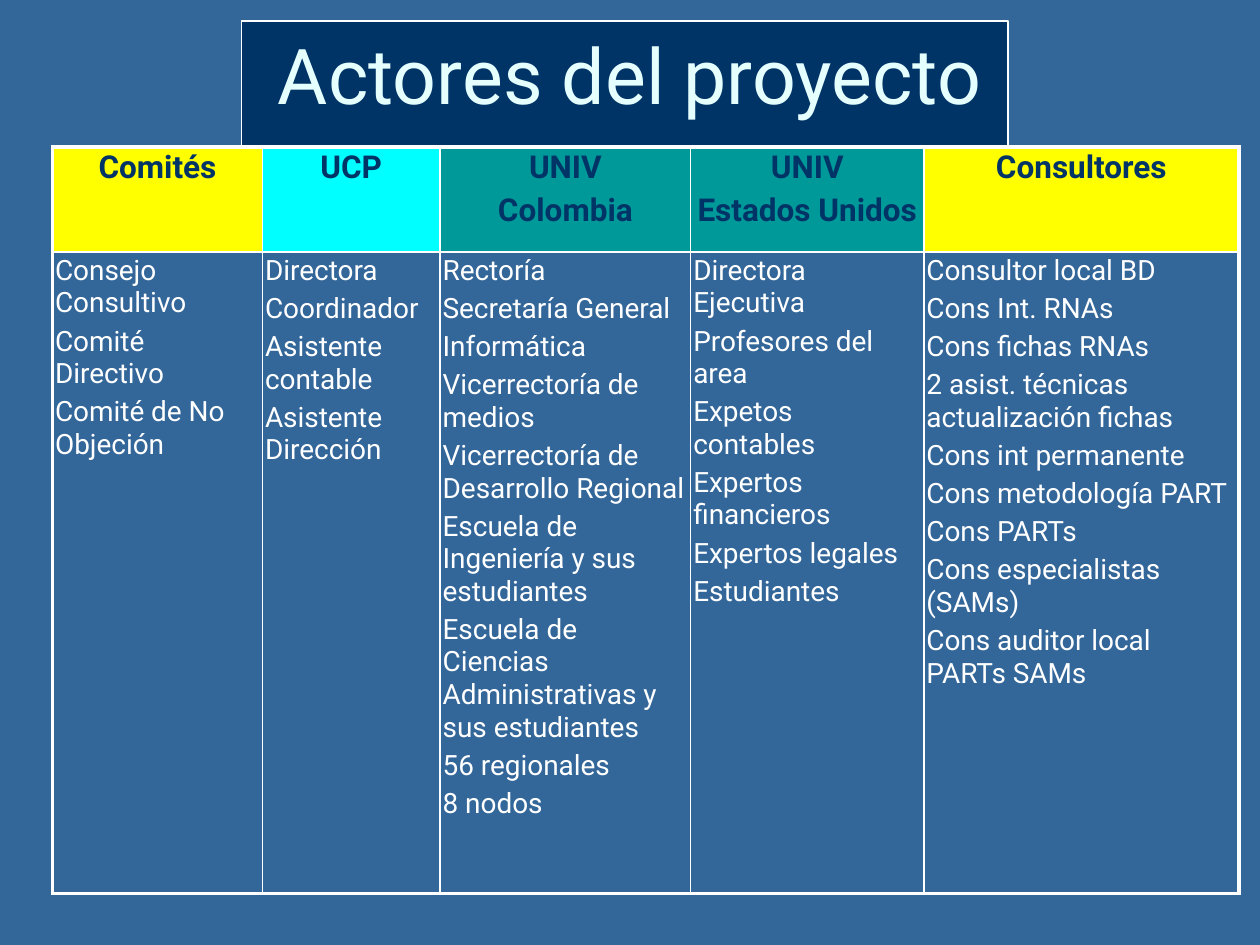
import dataclasses

import lxml.etree
import pptx
import pptx.dml.color
import pptx.enum.shapes
import pptx.enum.text
import pptx.oxml.ns
import pptx.slide
import pptx.table
import pptx.text.text
import pptx.util

Pt = pptx.util.Pt
Align = pptx.enum.text.PP_ALIGN


@dataclasses.dataclass(frozen=True)
class Theme:
    """Colours, font, type sizes and line widths."""
    face: str = "Roboto"
    back: str = "336699"
    navy: str = "003366"
    pale: str = "E5FFFF"
    white: str = "FFFFFF"
    yellow: str = "FFFF00"
    cyan: str = "00FFFF"
    teal: str = "009999"
    title: float = 44
    head: float = 18
    body: float = 16
    frame: float = 2.25
    rule: float = 1
    edge: float = 0.75
    inset: float = 1.5


@dataclasses.dataclass(frozen=True)
class Group:
    """One column of actors."""
    head: list[str]
    fill: str
    width: float
    names: list[str]


THEME = Theme()
LEFT, TOP = 30, 84
ROWS = [60, 366.5]
GROUPS = [
    Group(["Comités"], THEME.yellow, 120,
          ["Consejo Consultivo", "Comité Directivo", "Comité de No Objeción"]),
    Group(["UCP"], THEME.cyan, 101.5,
          ["Directora", "Coordinador", "Asistente contable",
           "Asistente Dirección"]),
    Group(["UNIV", "Colombia"], THEME.teal, 143.25,
          ["Rectoría", "Secretaría General", "Informática",
           "Vicerrectoría de medios", "Vicerrectoría de Desarrollo Regional",
           "Escuela de Ingeniería y sus estudiantes",
           "Escuela de Ciencias Administrativas y sus estudiantes",
           "56 regionales", "8 nodos"]),
    Group(["UNIV", "Estados Unidos"], THEME.teal, 133.25,
          ["Directora Ejecutiva", "Profesores del area", "Expetos contables",
           "Expertos financieros", "Expertos legales", "Estudiantes"]),
    Group(["Consultores"], THEME.yellow, 180,
          ["Consultor local BD", "Cons Int. RNAs", "Cons fichas RNAs",
           "2 asist. técnicas actualización fichas", "Cons int permanente",
           "Cons metodología PART", "Cons PARTs",
           "Cons especialistas (SAMs)", "Cons auditor local PARTs SAMs"]),
]


def tint(code: str) -> pptx.dml.color.RGBColor:
    """Return the colour for a hex code."""
    return pptx.dml.color.RGBColor.from_string(code)


def style(para: pptx.text.text._Paragraph, size: float, code: str,
          bold: bool, align: Align) -> None:
    """Set the font and alignment of a paragraph."""
    para.alignment = align
    font = para.font
    font.name, font.size, font.bold = THEME.face, Pt(size), bold
    font.color.rgb = tint(code)


def write(cell: pptx.table._Cell, lines: list[str], size: float, code: str,
          bold: bool, align: Align) -> None:
    """Write one paragraph per line, a fifth of the size apart."""
    cell.margin_left = cell.margin_right = Pt(THEME.inset)
    cell.margin_top = cell.margin_bottom = Pt(THEME.inset)
    cell.text_frame.text = "\n".join(lines)
    for spot, para in enumerate(cell.text_frame.paragraphs):
        style(para, size, code, bold, align)
        para.space_before = Pt(0.2 * size if spot else 0)


def border(cell: pptx.table._Cell, outer: dict[str, bool]) -> None:
    """Draw the four borders, thicker on outer sides."""
    qn = pptx.oxml.ns.qn
    props = cell._tc.get_or_add_tcPr()
    for spot, (side, thick) in enumerate(outer.items()):
        line = lxml.etree.Element(qn(f"a:ln{side}"))
        line.set("w", str(Pt(THEME.frame if thick else THEME.rule)))
        fill = lxml.etree.SubElement(line, qn("a:solidFill"))
        lxml.etree.SubElement(fill, qn("a:srgbClr")).set("val", THEME.white)
        props.insert(spot, line)


def draw_title(slide: pptx.slide.Slide, text: str) -> None:
    """Draw the title on its navy panel."""
    panel = slide.shapes.add_shape(pptx.enum.shapes.MSO_SHAPE.RECTANGLE,
                                   Pt(138), Pt(12), Pt(438), Pt(72))
    panel.shadow.inherit = False
    panel.fill.solid()
    panel.fill.fore_color.rgb = tint(THEME.navy)
    panel.line.color.rgb = tint(THEME.white)
    panel.line.width = Pt(THEME.edge)
    title = slide.shapes.title
    title.left, title.top = Pt(36), Pt(18)
    title.width, title.height = Pt(648), Pt(48)
    frame = title.text_frame
    frame.text = text
    frame.auto_size = pptx.enum.text.MSO_AUTO_SIZE.NONE
    frame.vertical_anchor = pptx.enum.text.MSO_ANCHOR.MIDDLE
    style(frame.paragraphs[0], THEME.title, THEME.pale, False, Align.CENTER)
    panel.element.addnext(title.element)


def draw_table(slide: pptx.slide.Slide, groups: list[Group]) -> None:
    """Draw the groups as columns with a heading and a list."""
    width = sum(group.width for group in groups)
    table = slide.shapes.add_table(len(ROWS), len(groups), Pt(LEFT), Pt(TOP),
                                   Pt(width), Pt(sum(ROWS))).table
    for row, height in zip(table.rows, ROWS):
        row.height = Pt(height)
    for col, group in enumerate(groups):
        table.columns[col].width = Pt(group.width)
        head, body = table.cell(0, col), table.cell(1, col)
        write(head, group.head, THEME.head, THEME.navy, True, Align.CENTER)
        write(body, group.names, THEME.body, THEME.white, False, Align.LEFT)
        head.fill.solid()
        head.fill.fore_color.rgb = tint(group.fill)
        body.fill.background()
        for cell in (head, body):
            border(cell, {"L": col == 0, "R": col == len(groups) - 1,
                          "T": cell is head, "B": cell is body})


def main() -> None:
    """Build and save the slide."""
    deck = pptx.Presentation()
    deck.slide_width, deck.slide_height = Pt(720), Pt(540)
    slide = deck.slides.add_slide(deck.slide_layouts[5])
    slide.background.fill.solid()
    slide.background.fill.fore_color.rgb = tint(THEME.back)
    draw_title(slide, "Actores del proyecto")
    draw_table(slide, GROUPS)
    deck.save("out.pptx")


if __name__ == "__main__":
    main()
